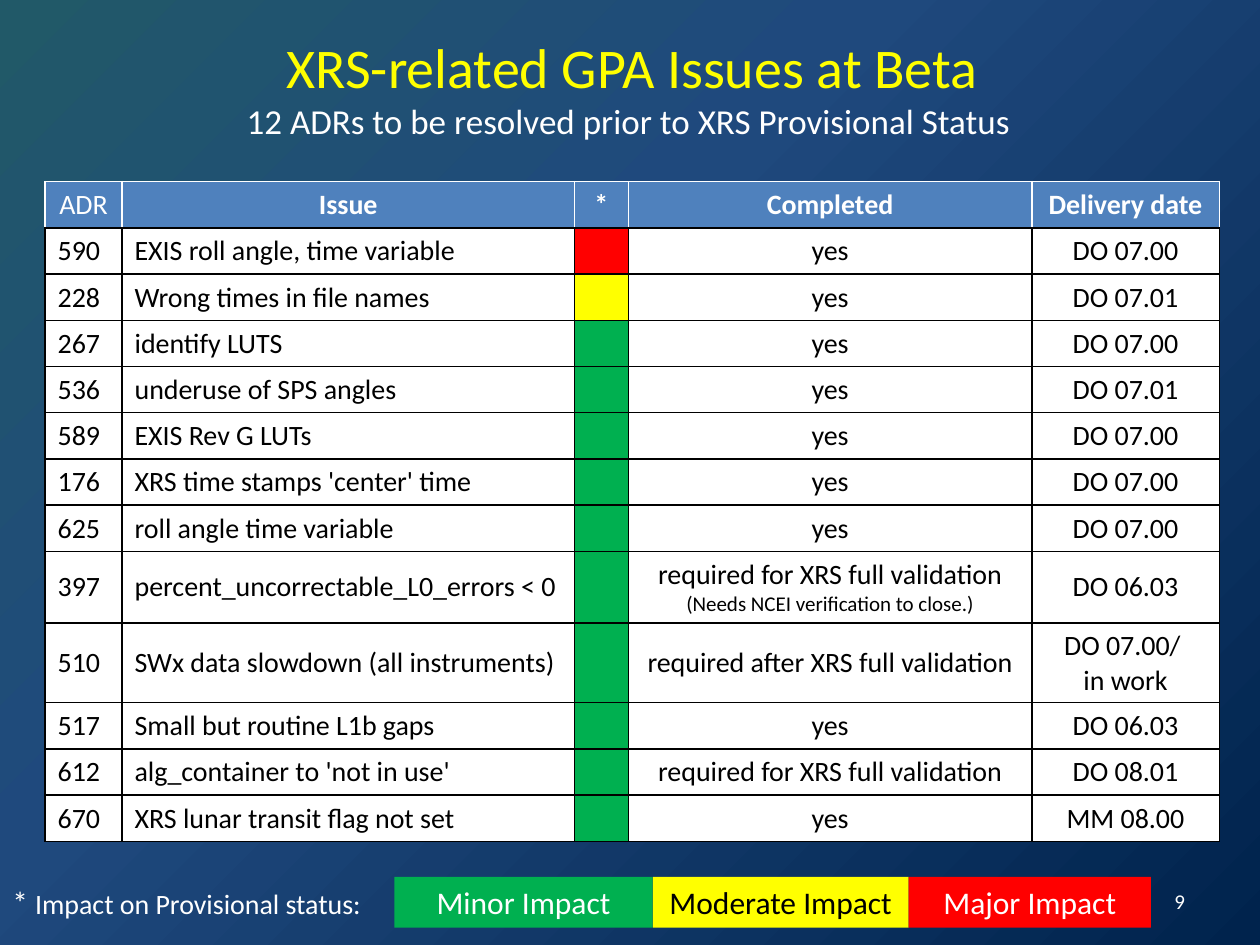
from dataclasses import dataclass
from typing import Any

import pptx
import pptx.dml.color
import pptx.enum.shapes
import pptx.enum.text
import pptx.oxml
import pptx.oxml.ns
import pptx.util

Cm = pptx.util.Cm
Pt = pptx.util.Pt
ALIGN = pptx.enum.text.PP_ALIGN
ANCHOR = pptx.enum.text.MSO_ANCHOR
AUTO_SIZE = pptx.enum.text.MSO_AUTO_SIZE

COLORS = {
    "white": "FFFFFF",
    "black": "000000",
    "header": "4F81BD",
    "minor": "00B050",
    "moderate": "FFFF00",
    "major": "FF0000",
}
GRADIENT = {0: "215968", 40: "1F497D", 100: "00234D"}
COLUMN_WIDTHS = (1.55, 9.12, 1.09, 8.13, 3.78)
ROW_HEIGHT = 0.81
LEGEND_TOP, LEGEND_HEIGHT = 17.68, 1.02


@dataclass(frozen=True)
class Span:
    text: str
    size: float = 16
    color: str = "black"
    bold: bool = False


@dataclass(frozen=True)
class Issue:
    adr: str
    summary: str
    impact: str
    completed: tuple[Span, ...]
    delivery: tuple[Span, ...]


@dataclass(frozen=True)
class Impact:
    label: str
    level: str
    text_color: str
    width: float


YES = (Span("yes"),)
FULL_VALIDATION = Span("required for XRS full validation")


def delivered(*lines: str) -> tuple[Span, ...]:
    return tuple(Span(line) for line in lines)


ISSUES = (
    Issue("590", "EXIS roll angle, time variable", "major", YES, delivered("DO 07.00")),
    Issue("228", "Wrong times in file names", "moderate", YES, delivered("DO 07.01")),
    Issue("267", "identify LUTS", "minor", YES, delivered("DO 07.00")),
    Issue("536", "underuse of SPS angles", "minor", YES, delivered("DO 07.01")),
    Issue("589", "EXIS Rev G LUTs", "minor", YES, delivered("DO 07.00")),
    Issue("176", "XRS time stamps 'center' time", "minor", YES, delivered("DO 07.00")),
    Issue("625", "roll angle time variable", "minor", YES, delivered("DO 07.00")),
    Issue("397", "percent_uncorrectable_L0_errors < 0", "minor",
          (FULL_VALIDATION, Span("(Needs NCEI verification to close.)", 12)), delivered("DO 06.03")),
    Issue("510", "SWx data slowdown (all instruments)", "minor",
          (Span("required after XRS full validation"),), delivered("DO 07.00/ ", "in work")),
    Issue("517", "Small but routine L1b gaps", "minor", YES, delivered("DO 06.03")),
    Issue("612", "alg_container to 'not in use'", "minor", (FULL_VALIDATION,), delivered("DO 08.01")),
    Issue("670", "XRS lunar transit flag not set", "minor", YES, delivered("MM 08.00")),
)
IMPACTS = (
    Impact("Minor Impact", "minor", "white", 5.21),
    Impact("Moderate Impact", "moderate", "black", 5.16),
    Impact("Major Impact", "major", "white", 4.88),
)


def rgb(color: str) -> pptx.dml.color.RGBColor:
    return pptx.dml.color.RGBColor.from_string(COLORS[color])


def apply(target: Any, values: dict[str, Any]) -> None:
    for attribute, value in values.items():
        setattr(target, attribute, value)


def write_span(paragraph: Any, span: Span) -> None:
    run = paragraph.add_run()
    run.text = span.text
    apply(run.font, {"name": "Calibri", "size": Pt(span.size), "bold": span.bold})
    run.font.color.rgb = rgb(span.color)


def write_lines(frame: Any, lines: tuple[Span, ...], align: Any) -> None:
    for index, span in enumerate(lines):
        paragraph = frame.add_paragraph() if index else frame.paragraphs[0]
        paragraph.alignment = align
        write_span(paragraph, span)


def paint_background(slide: Any) -> None:
    slide.background.fill.gradient()
    stops = "".join(
        f'<a:gs pos="{position * 1000}"><a:srgbClr val="{color}"/></a:gs>'
        for position, color in GRADIENT.items()
    )
    radial = pptx.oxml.parse_xml(
        f'<a:gradFill {pptx.oxml.ns.nsdecls("a")} rotWithShape="1"><a:gsLst>{stops}</a:gsLst>'
        '<a:path path="circle"><a:fillToRect r="100000" b="100000"/></a:path></a:gradFill>'
    )
    linear = slide.background._cSld.find(".//" + pptx.oxml.ns.qn("a:gradFill"))
    linear.getparent().replace(linear, radial)


def add_text(slide: Any, box: tuple[float, ...], lines: tuple[Span, ...], align: Any,
             **frame_format: Any) -> Any:
    frame = slide.shapes.add_textbox(*map(Cm, box)).text_frame
    apply(frame, {"word_wrap": True, **frame_format})
    write_lines(frame, lines, align)
    return frame


def fill_cell(cell: Any, lines: tuple[Span, ...], fill: str, align: Any, edge: str) -> None:
    properties = cell._tc.get_or_add_tcPr()
    for side in "LRTB":
        color = COLORS["black" if side == "B" else edge]
        properties.append(pptx.oxml.parse_xml(
            f'<a:ln{side} {pptx.oxml.ns.nsdecls("a")} w="12700"><a:solidFill>'
            f'<a:srgbClr val="{color}"/></a:solidFill></a:ln{side}>'
        ))
    cell.fill.solid()
    cell.fill.fore_color.rgb = rgb(fill)
    cell.vertical_anchor = ANCHOR.MIDDLE
    write_lines(cell.text_frame, lines, align)
    if not lines:
        cell.text_frame.paragraphs[0]._p.append(pptx.oxml.parse_xml(
            f'<a:endParaRPr {pptx.oxml.ns.nsdecls("a")} sz="1600"/>'
        ))


def add_issue_table(slide: Any) -> None:
    row_count = len(ISSUES) + 1
    table = slide.shapes.add_table(
        row_count, len(COLUMN_WIDTHS), Cm(0.91), Cm(3.66),
        Cm(sum(COLUMN_WIDTHS)), Cm(ROW_HEIGHT * row_count),
    ).table
    apply(table, {"first_row": False, "horz_banding": False})
    for column, width in zip(table.columns, COLUMN_WIDTHS):
        column.width = Cm(width)
    for row in table.rows:
        row.height = Cm(ROW_HEIGHT)
    for index, heading in enumerate(("ADR", "Issue", "*", "Completed", "Delivery date")):
        title = Span(heading, color="white", bold=index > 0)
        fill_cell(table.cell(0, index), (title,), "header", ALIGN.CENTER, "white")
    for row_index, issue in enumerate(ISSUES, 1):
        contents = (
            ((Span(issue.adr),), "white", ALIGN.LEFT),
            ((Span(issue.summary),), "white", ALIGN.LEFT),
            ((), issue.impact, ALIGN.CENTER),
            (issue.completed, "white", ALIGN.CENTER),
            (issue.delivery, "white", ALIGN.CENTER),
        )
        for column_index, content in enumerate(contents):
            fill_cell(table.cell(row_index, column_index), *content, "black")


def add_legend(slide: Any) -> None:
    legend = slide.shapes.add_group_shape()
    left = 7.95
    for impact in IMPACTS:
        swatch = legend.shapes.add_shape(
            pptx.enum.shapes.MSO_SHAPE.RECTANGLE,
            *map(Cm, (left, LEGEND_TOP, impact.width, LEGEND_HEIGHT)),
        )
        swatch.shadow.inherit = False
        swatch.fill.solid()
        swatch.fill.fore_color.rgb = rgb(impact.level)
        swatch.line.fill.background()
        apply(swatch.text_frame, {"word_wrap": True, "vertical_anchor": ANCHOR.TOP,
                                  "auto_size": AUTO_SIZE.SHAPE_TO_FIT_TEXT})
        write_lines(swatch.text_frame, (Span(impact.label, 18, impact.text_color),), ALIGN.CENTER)
        left += impact.width


def main() -> None:
    deck = pptx.Presentation()
    apply(deck, {"slide_width": Cm(25.4), "slide_height": Cm(19.05)})
    slide = deck.slides.add_slide(deck.slide_layouts[6])
    paint_background(slide)
    add_text(slide, (18.21, 17.65, 5.93, 1.02), (Span("9", 12, "white"),), ALIGN.RIGHT,
             vertical_anchor=ANCHOR.MIDDLE)
    heading = (Span("XRS-related GPA Issues at Beta", 32, "moderate"),
               Span("12 ADRs to be resolved prior to XRS Provisional Status ", 20, "white"))
    add_text(slide, (1.32, 0.53, 22.86, 2.46), heading, ALIGN.CENTER, vertical_anchor=ANCHOR.MIDDLE)
    add_issue_table(slide)
    legend_note = add_text(slide, (0, LEGEND_TOP, 7.8, LEGEND_HEIGHT), (Span("* ", 18, "white"),),
                           ALIGN.LEFT, word_wrap=False, auto_size=AUTO_SIZE.SHAPE_TO_FIT_TEXT)
    write_span(legend_note.paragraphs[0], Span("Impact on Provisional status:", 16, "white"))
    add_legend(slide)
    deck.save("out.pptx")


if __name__ == "__main__":
    main()
